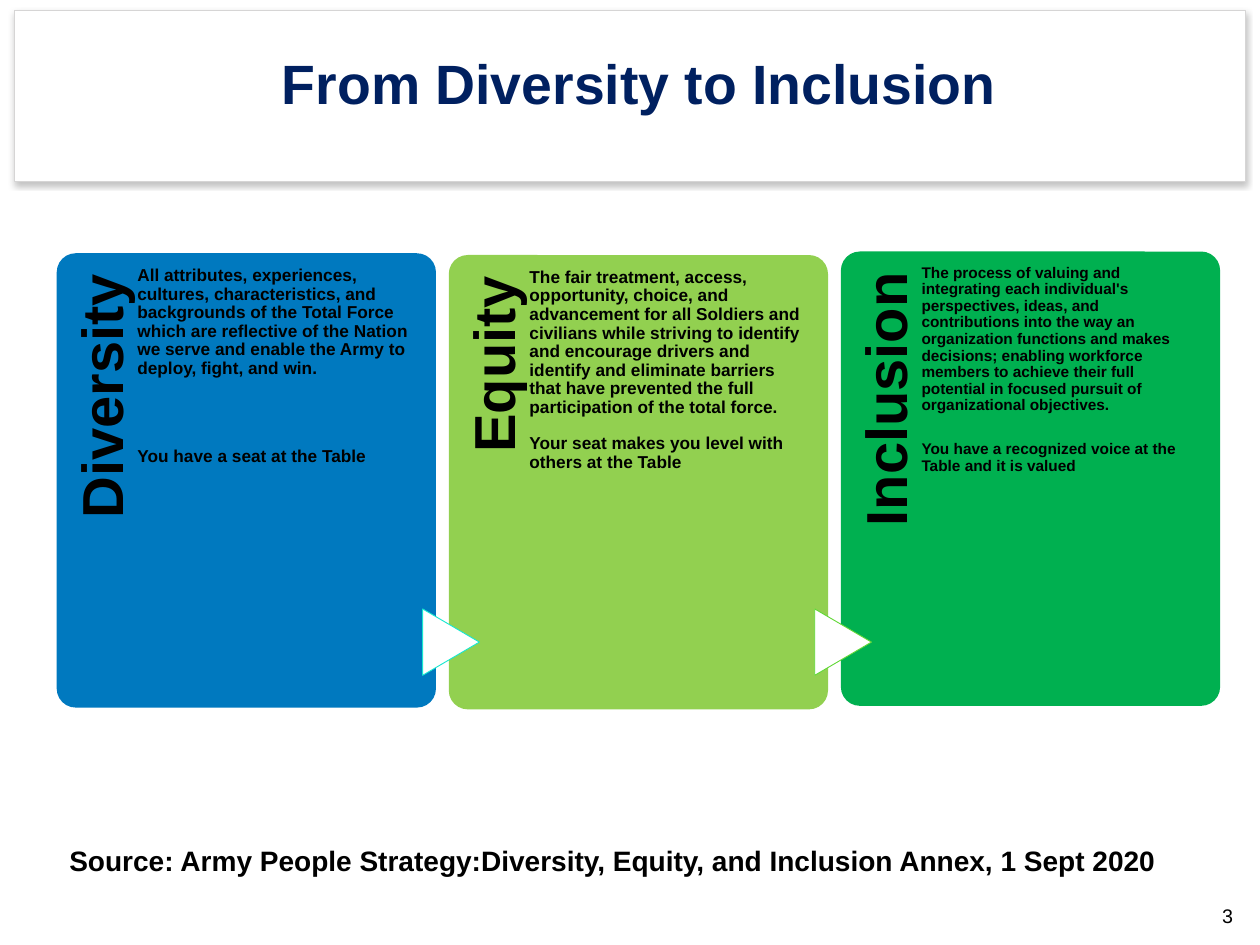
from dataclasses import dataclass

from lxml import etree
from pptx import Presentation
from pptx import util as u
from pptx.dml.color import RGBColor
from pptx.enum import shapes, text
from pptx.oxml import ns

BLACK = RGBColor(0x00, 0x00, 0x00)
WHITE = RGBColor(0xFF, 0xFF, 0xFF)
NAVY = RGBColor(0x00, 0x20, 0x60)
BANNER_EDGE = RGBColor(0xD6, 0xD5, 0xD5)
BLUE = RGBColor(0x00, 0x79, 0xBF)
LIME = RGBColor(0x92, 0xD0, 0x50)
GREEN = RGBColor(0x00, 0xB0, 0x50)
CYAN_EDGE = RGBColor(0x16, 0xE7, 0xCF)
GREEN_EDGE = RGBColor(0x61, 0xD8, 0x36)

Box = tuple[float, float, float, float]
SMALL_INSETS = (0.06, 0.06, 0.06, 0.06)
DEFAULT_INSETS = (0.1, 0.05, 0.1, 0.05)
HEADING_INSETS = (0, 0.18, 0.23, 0)
BODY_INSETS = (0.05, 0.15, 0, 0)

CARD_LEFT, CARD_PITCH = 0.64, 4.425
CARD_WIDTH, CARD_HEIGHT = 4.28, 5.13


@dataclass
class Stage:
    heading: str
    definition: str
    seat: str
    top: float
    size: float
    gap: float
    fill: RGBColor
    arrow_edge: RGBColor | None = None


@dataclass
class Label:
    words: str
    box: Box
    size: float
    color: RGBColor = BLACK
    bold: bool = True
    insets: Box = DEFAULT_INSETS


STAGES = [
    Stage("Diversity",
          "All attributes, experiences, cultures, characteristics, and backgrounds of the "
          "Total Force which are reflective of the Nation we serve and enable the Army to "
          "deploy, fight, and win.",
          "You have a seat at the Table", 2.86, 14, 56.4, BLUE),
    Stage("Equity",
          "The fair treatment, access, opportunity, choice, and advancement for all Soldiers "
          "and civilians while striving to identify and encourage drivers and identify and "
          "eliminate barriers that have prevented the full participation of the total force.",
          "Your seat makes you level with others at the Table", 2.88, 14, 14.2, LIME, CYAN_EDGE),
    Stage("Inclusion",
          "The process of valuing and integrating each individual's perspectives, ideas, and "
          "contributions into the way an organization functions and makes decisions; enabling "
          "workforce members to achieve their full potential in focused pursuit of "
          "organizational objectives.",
          "You have a recognized voice at the Table and it is valued",
          2.84, 12.5, 22.4, GREEN, GREEN_EDGE),
]

LABELS = [
    Label("3", (13.66, 10.14, 0.39, 0.38), 16, bold=False, insets=SMALL_INSETS),
    Label("Source: Army People Strategy:Diversity, Equity, and Inclusion Annex, 1 Sept 2020",
          (0.6, 9.47, 12.63, 0.48), 22.8),
    Label("From Diversity to Inclusion", (3.04, 0.51, 8.34, 0.86), 45, NAVY),
]


def add_block(slide, kind, box: Box, fill: RGBColor, edge: RGBColor | None = None,
              edge_width: float = 0.75):
    block = slide.shapes.add_shape(kind, *map(u.Inches, box))
    block.shadow.inherit = False
    block.fill.solid()
    block.fill.fore_color.rgb = fill
    if edge is None:
        block.line.fill.background()
    else:
        block.line.color.rgb = edge
        block.line.width = u.Pt(edge_width)
    return block


def add_text(slide, box: Box, paragraphs: list[str], size: float, insets: Box,
             align=text.PP_ALIGN.LEFT, color: RGBColor = BLACK, bold: bool = True,
             wrap: bool = True, spacing: float = 1.0, gap: float = 0):
    holder = slide.shapes.add_textbox(*map(u.Inches, box))
    frame = holder.text_frame
    frame.word_wrap = wrap
    (frame.margin_left, frame.margin_top,
     frame.margin_right, frame.margin_bottom) = map(u.Inches, insets)
    for index, words in enumerate(paragraphs):
        paragraph = frame.add_paragraph() if index else frame.paragraphs[0]
        paragraph.alignment = align
        paragraph.line_spacing = spacing
        if index:
            paragraph.space_before = u.Pt(gap)
        run = paragraph.add_run()
        run.text = words
        run.font.name = "Arial"
        run.font.size = u.Pt(size)
        run.font.bold = bold
        run.font.color.rgb = color
    return holder


def add_banner(slide) -> None:
    banner = add_block(slide, shapes.MSO_SHAPE.RECTANGLE, (0.16, 0.12, 13.9, 1.93),
                       WHITE, BANNER_EDGE, 1)
    effects = banner.fill._xPr.find(ns.qn("a:effectLst"))
    shadow = etree.SubElement(effects, ns.qn("a:outerShdw"), blurRad=str(u.Pt(5)),
                              dist=str(u.Pt(2)), dir="5400000", rotWithShape="0")
    tint = etree.SubElement(shadow, ns.qn("a:srgbClr"), val=str(BLACK))
    etree.SubElement(tint, ns.qn("a:alpha"), val="23000")


def add_stage(slide, stage: Stage, left: float) -> None:
    card = add_block(slide, shapes.MSO_SHAPE.ROUNDED_RECTANGLE,
                     (left, stage.top, CARD_WIDTH, CARD_HEIGHT), stage.fill)
    card.adjustments[0] = 0.05
    heading = add_text(slide, (left - 1.67, stage.top + 1.68, 4.21, 0.86), [stage.heading],
                       47, HEADING_INSETS, text.PP_ALIGN.RIGHT, spacing=0.9)
    heading.rotation = 270
    if stage.arrow_edge is not None:
        arrow = add_block(slide, shapes.MSO_SHAPE.FLOWCHART_EXTRACT,
                          (left - 0.35, 6.93, 0.75, 0.64), WHITE, stage.arrow_edge)
        arrow.rotation = 90
    add_text(slide, (left + 0.86, stage.top, 3.18, CARD_HEIGHT),
             [stage.definition, stage.seat], stage.size, BODY_INSETS,
             spacing=0.9, gap=stage.gap)


def main() -> None:
    deck = Presentation()
    deck.slide_width, deck.slide_height = u.Inches(14.22), u.Inches(10.67)
    slide = deck.slides.add_slide(deck.slide_layouts[6])

    # Title banner
    add_banner(slide)

    # Three stages, linked by arrows
    for index, stage in enumerate(STAGES):
        add_stage(slide, stage, CARD_LEFT + index * CARD_PITCH)

    # Page number, source line and title
    for label in LABELS:
        add_text(slide, label.box, [label.words], label.size, label.insets,
                 text.PP_ALIGN.CENTER, label.color, label.bold, wrap=False)

    deck.save("out.pptx")


if __name__ == "__main__":
    main()
